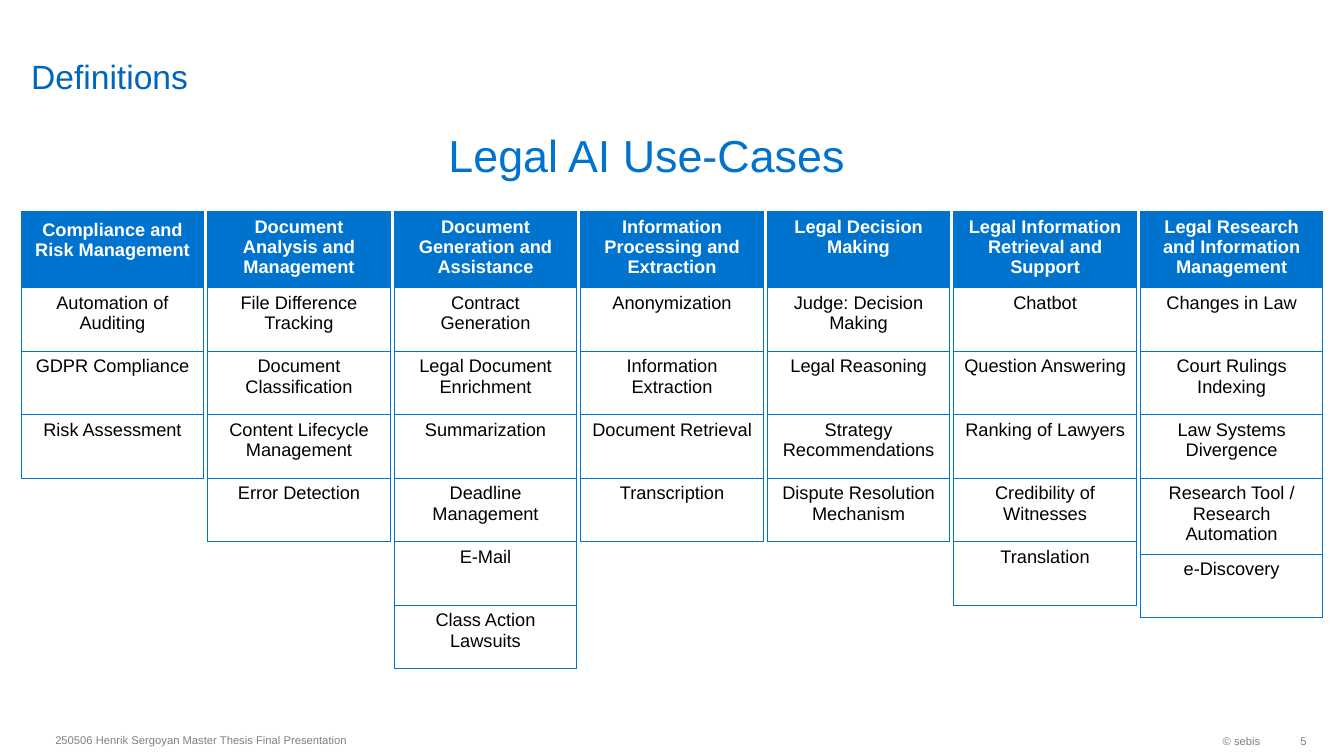
from dataclasses import dataclass

from pptx import Presentation
from pptx.dml.color import RGBColor
from pptx.enum.text import MSO_ANCHOR, PP_ALIGN
from pptx.oxml import parse_xml
from pptx.oxml.ns import nsdecls
from pptx.slide import Slide
from pptx.table import _Cell
from pptx.text.text import _Paragraph
from pptx.util import Inches, Pt


@dataclass(frozen=True)
class Theme:
    font: str = "Arial"
    title_color: str = "0065BD"
    accent: str = "0073CF"
    header_text: str = "FFFFFF"
    body_text: str = "000000"
    cell_fill: str = "FFFFFF"
    footer_color: str = "808080"
    title_size: int = 24
    heading_size: int = 32
    table_size: int = 13
    footer_size: int = 8
    border_width: float = 0.75


@dataclass(frozen=True)
class Label:
    text: str
    left: float
    top: float
    width: float
    height: float
    size: int
    color: str
    anchor: MSO_ANCHOR = MSO_ANCHOR.MIDDLE
    align: PP_ALIGN = PP_ALIGN.LEFT
    wrap: bool = True
    margin_y: float = 0.05
    margin_right: float = 0.1


@dataclass(frozen=True)
class Category:
    name: str
    use_cases: tuple[str, ...]
    header_margin_top: float = 0.05


THEME = Theme()
TABLE_LEFT, TABLE_TOP = 0.21, 2.1
COLUMN_WIDTH, COLUMN_PITCH = 1.81, 1.85
ROW_HEIGHT, TALL_ROW_HEIGHT = 0.63, 0.755
THREE_LINE_USE_CASE = "Research Tool / Research Automation"

LABELS = (
    Label("Definitions", 0.21, 0.51, 11.58, 0.44, THEME.title_size, THEME.title_color,
          anchor=MSO_ANCHOR.BOTTOM, margin_y=0),
    Label("Legal AI Use-Cases", 4.35, 1.22, 4.16, 0.64, THEME.heading_size, THEME.accent,
          anchor=MSO_ANCHOR.TOP, wrap=False),
    Label("250506 Henrik Sergoyan Master Thesis Final Presentation", 0.45, 7.18, 6.3, 0.32,
          THEME.footer_size, THEME.footer_color),
    Label("© sebis", 10.26, 7.19, 2.34, 0.32, THEME.footer_size, THEME.footer_color,
          align=PP_ALIGN.RIGHT, wrap=False),
    Label("5", 12.6, 7.19, 0.36, 0.32, THEME.footer_size, THEME.footer_color,
          align=PP_ALIGN.RIGHT, wrap=False, margin_right=0),
)

CATEGORIES = (
    Category("Compliance and Risk Management",
             ("Automation of Auditing", "GDPR Compliance", "Risk Assessment"),
             header_margin_top=0.08),
    Category("Document Analysis and Management",
             ("File Difference Tracking", "Document Classification",
              "Content Lifecycle Management", "Error Detection")),
    Category("Document Generation and Assistance",
             ("Contract Generation", "Legal Document Enrichment", "Summarization",
              "Deadline Management", "E-Mail", "Class Action Lawsuits")),
    Category("Information Processing and Extraction",
             ("Anonymization", "Information Extraction", "Document Retrieval",
              "Transcription")),
    Category("Legal Decision Making",
             ("Judge: Decision Making", "Legal Reasoning", "Strategy Recommendations",
              "Dispute Resolution Mechanism")),
    Category("Legal Information Retrieval and Support",
             ("Chatbot", "Question Answering", "Ranking of Lawyers",
              "Credibility of Witnesses", "Translation")),
    Category("Legal Research and Information Management",
             ("Changes in Law", "Court Rulings Indexing", "Law Systems Divergence",
              THREE_LINE_USE_CASE, "e-Discovery")),
)


def format_paragraph(paragraph: _Paragraph, size: int, color: str,
                     align: PP_ALIGN, bold: bool = False) -> None:
    paragraph.alignment = align
    for run in paragraph.runs:
        run.font.name = THEME.font
        run.font.size = Pt(size)
        run.font.bold = bold
        run.font.color.rgb = RGBColor.from_string(color)


def add_label(slide: Slide, label: Label) -> None:
    text_box = slide.shapes.add_textbox(Inches(label.left), Inches(label.top),
                                        Inches(label.width), Inches(label.height))
    text_frame = text_box.text_frame
    text_frame.word_wrap = label.wrap
    text_frame.vertical_anchor = label.anchor
    text_frame.margin_top = text_frame.margin_bottom = Inches(label.margin_y)
    text_frame.margin_right = Inches(label.margin_right)
    text_frame.text = label.text
    format_paragraph(text_frame.paragraphs[0], label.size, label.color, label.align)


def add_borders(cell: _Cell) -> None:
    """Outline all four sides; borders must precede the fill in the cell properties."""
    properties = cell._tc.get_or_add_tcPr()
    for index, side in enumerate(("lnL", "lnR", "lnT", "lnB")):
        properties.insert(index, parse_xml(
            f'<a:{side} {nsdecls("a")} w="{Pt(THEME.border_width)}"><a:solidFill>'
            f'<a:srgbClr val="{THEME.accent}"/></a:solidFill></a:{side}>'))


def fill_cell(cell: _Cell, text: str, is_header: bool) -> None:
    cell.text_frame.text = text
    cell.vertical_anchor = MSO_ANCHOR.TOP
    cell.fill.solid()
    cell.fill.fore_color.rgb = RGBColor.from_string(
        THEME.accent if is_header else THEME.cell_fill)
    format_paragraph(cell.text_frame.paragraphs[0], THEME.table_size,
                     THEME.header_text if is_header else THEME.body_text,
                     PP_ALIGN.CENTER, bold=is_header)
    add_borders(cell)


def add_category(slide: Slide, category: Category, left: float) -> None:
    texts = (category.name, *category.use_cases)
    heights = [TALL_ROW_HEIGHT if text in (category.name, THREE_LINE_USE_CASE)
               else ROW_HEIGHT for text in texts]
    table = slide.shapes.add_table(len(texts), 1, Inches(left), Inches(TABLE_TOP),
                                   Inches(COLUMN_WIDTH), Inches(sum(heights))).table
    table.horz_banding = False
    for index, (text, height) in enumerate(zip(texts, heights)):
        table.rows[index].height = Inches(height)
        fill_cell(table.cell(index, 0), text, is_header=index == 0)
    table.cell(0, 0).margin_top = Inches(category.header_margin_top)


def main() -> None:
    presentation = Presentation()
    presentation.slide_width = Inches(13.33)
    presentation.slide_height = Inches(7.5)
    slide = presentation.slides.add_slide(presentation.slide_layouts[6])
    for label in LABELS:
        add_label(slide, label)
    for index, category in enumerate(CATEGORIES):
        add_category(slide, category, TABLE_LEFT + index * COLUMN_PITCH)
    presentation.save("out.pptx")


if __name__ == "__main__":
    main()
